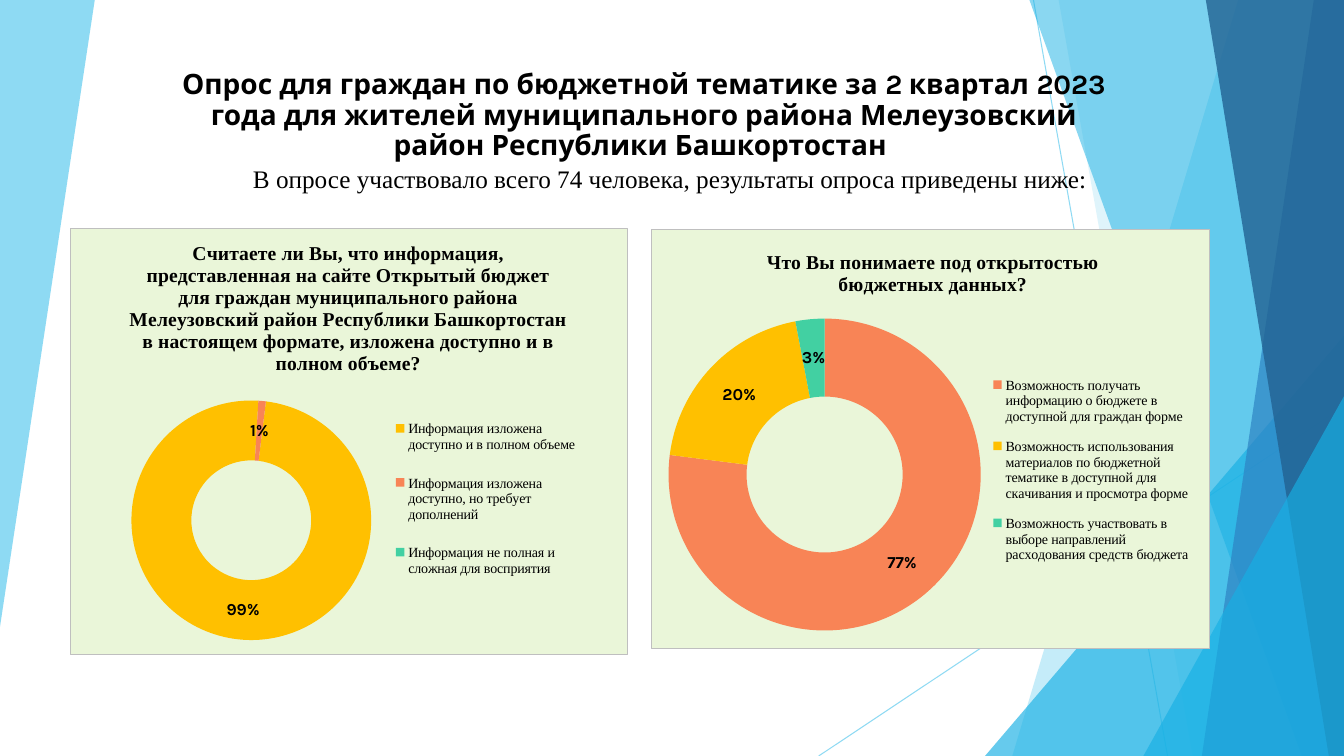
from lxml import etree
from pptx import Presentation
from pptx.chart.data import CategoryChartData
from pptx.dml.color import RGBColor
from pptx.enum.chart import XL_CHART_TYPE, XL_LEGEND_POSITION
from pptx.enum.shapes import MSO_CONNECTOR, MSO_SHAPE
from pptx.enum.text import MSO_ANCHOR, PP_ALIGN
from pptx.oxml.ns import qn
from pptx.util import Inches, Pt

DOUGHNUT = XL_CHART_TYPE.DOUGHNUT
LEGEND_RIGHT = XL_LEGEND_POSITION.RIGHT
STRAIGHT = MSO_CONNECTOR.STRAIGHT
TRIANGLE = MSO_SHAPE.ISOSCELES_TRIANGLE
TOP, BOTTOM = MSO_ANCHOR.TOP, MSO_ANCHOR.BOTTOM
CENTER = PP_ALIGN.CENTER

WIDTH, HEIGHT = 13.33, 7.5
SANS, SERIF = "Karla", "Times New Roman"
COLORS = {
    "black": "000000", "sky": "5FCBEF", "azure": "17B0E4", "blue": "2E83C3",
    "navy": "226292", "panel": "EAF6D9", "border": "BFBFBF",
    "orange": "F88456", "yellow": "FFC000", "green": "42D0A2",
}


def rgb(name):
    return RGBColor.from_string(COLORS[name])


def style_font(font, size, face, bold=False):
    font.size = Pt(size)
    font.name = face
    font.bold = bold
    font.color.rgb = rgb("black")


def paint(fill, color, opacity):
    fill.solid()
    fill.fore_color.rgb = rgb(color)
    for node in fill._xPr.iter(qn("a:srgbClr")):
        etree.SubElement(node, qn("a:alpha"), val=str(opacity * 1000))


def finish_facet(shape, color, opacity):
    shape.shadow.inherit = False
    shape.line.fill.background()
    paint(shape.fill, color, opacity)


def add_polygon(page, points, color, opacity):
    corners = [(Inches(x), Inches(y)) for x, y in points]
    builder = page.shapes.build_freeform(*corners[0])
    builder.add_line_segments(corners[1:], close=True)
    finish_facet(builder.convert_to_shape(), color, opacity)


def add_band(page, top_left, bottom_left, color, opacity):
    points = [(top_left, 0), (WIDTH, 0), (WIDTH, HEIGHT), (bottom_left, HEIGHT)]
    add_polygon(page, points, color, opacity)


def add_corner(page, left, top, color, opacity):
    shape = page.shapes.add_shape(TRIANGLE, Inches(left), Inches(top),
                                  Inches(WIDTH - left), Inches(HEIGHT - top))
    shape.adjustments[0] = 1
    finish_facet(shape, color, opacity)


def add_ray(page, start, end):
    ray = page.shapes.add_connector(STRAIGHT, *map(Inches, start + end))
    ray.line.width = Pt(0.75)
    paint(ray.line.fill, "sky", 70)
    etree.SubElement(ray._element.spPr, qn("a:effectLst"))


def add_backdrop(page):
    add_polygon(page, [(0, 0), (0.94, 0), (0, 6.22)], "sky", 70)
    add_ray(page, (10.25, 0), (11.58, HEIGHT))
    add_ray(page, (WIDTH, 4.03), (8.12, HEIGHT))
    add_band(page, 12.28, 10.04, "sky", 36)
    add_band(page, 10.5, 11.83, "sky", 20)
    add_corner(page, 9.77, 3.33, "azure", 66)
    add_band(page, 10.21, 12.91, "azure", 50)
    add_band(page, 13.03, 11.92, "blue", 70)
    add_band(page, 11.96, 13.18, "navy", 80)
    add_corner(page, 11.34, 3.93, "azure", 66)


def add_text(page, text, box, size, face, bold=False, anchor=TOP, spacing=1.0):
    frame = page.shapes.add_textbox(*map(Inches, box)).text_frame
    frame.word_wrap = True
    frame.vertical_anchor = anchor
    para = frame.paragraphs[0]
    para.alignment = CENTER
    para.line_spacing = spacing
    span = para.add_run()
    span.text = text
    style_font(span.font, size, face, bold)


def place(parent, after, **fractions):
    for old in parent.findall(qn("c:layout")):
        parent.remove(old)
    layout = etree.Element(qn("c:layout"))
    manual = etree.SubElement(layout, qn("c:manualLayout"))
    if after is None:
        etree.SubElement(manual, qn("c:layoutTarget"), val="inner")
        parent.insert(0, layout)
    else:
        parent.find(qn(after)).addnext(layout)
    for axis in "xy":
        etree.SubElement(manual, qn(f"c:{axis}Mode"), val="edge")
    for key, value in fractions.items():
        etree.SubElement(manual, qn(f"c:{key}"), val=str(value))


def fill_panel(chart):
    panel = etree.Element(qn("c:spPr"))
    chart._chartSpace.find(qn("c:chart")).addnext(panel)
    line = etree.Element(qn("a:ln"), w=str(Pt(0.75)))
    for parent, color in ((panel, "panel"), (line, "border")):
        solid = etree.SubElement(parent, qn("a:solidFill"))
        etree.SubElement(solid, qn("a:srgbClr"), val=COLORS[color])
    panel.append(line)


def hide_label(labels, index):
    label = etree.Element(qn("c:dLbl"))
    etree.SubElement(label, qn("c:idx"), val=str(index))
    etree.SubElement(label, qn("c:delete"), val="1")
    labels._element.insert(0, label)


def add_survey_chart(page, box, title, answers, angle, title_at, plot_at, legend_at):
    data = CategoryChartData()
    data.categories = [answer for answer, share, color in answers]
    data.add_series("Series 1", [share for answer, share, color in answers])
    chart = page.shapes.add_chart(DOUGHNUT, *map(Inches, box), data).chart
    style_font(chart.font, 10, SANS)
    fill_panel(chart)

    frame = chart.chart_title.text_frame
    frame.text = title
    style_font(frame.paragraphs[0].runs[0].font, 14, SERIF, True)
    chart.chart_title.include_in_layout = False
    place(chart.chart_title._element, "c:tx", **title_at)

    chart.has_legend = True
    chart.legend.position = LEGEND_RIGHT
    chart.legend.include_in_layout = False
    style_font(chart.legend.font, 10, SERIF)
    place(chart.legend._element, "c:legendPos", **legend_at)
    place(chart._chartSpace.find(".//" + qn("c:plotArea")), None, **plot_at)

    plot = chart.plots[0]
    plot.vary_by_categories = True
    plot._element.find(qn("c:firstSliceAng")).set("val", str(angle))
    series = plot.series[0]
    labels = series.data_labels
    labels.show_value = False
    labels.show_percentage = True
    labels.number_format = "0%"
    labels.number_format_is_linked = False
    style_font(labels.font, 12, SANS, True)
    for index, (answer, share, color) in enumerate(answers):
        slice_format = series.points[index].format
        slice_format.fill.solid()
        slice_format.fill.fore_color.rgb = rgb(color)
        slice_format.line.fill.background()
        if not share:
            hide_label(labels, index)


def build_survey_page(deck):
    page = deck.slides.add_slide(deck.slide_layouts[6])
    add_backdrop(page)
    add_text(page, "Опрос для граждан по бюджетной тематике за 2 квартал 2023 года для жителей муниципального района Мелеузовский район Республики Башкортостан ",
             (1.57, 0.59, 9.63, 1.06), 20, SANS, bold=True, anchor=BOTTOM, spacing=0.9)
    add_text(page, "В опросе участвовало всего 74 человека, результаты опроса приведены ниже:",
             (1.92, 1.57, 9.45, 0.4), 18, SERIF)
    add_survey_chart(
        page, (6.46, 2.27, 5.54, 4.17),
        "Что Вы понимаете под открытостью бюджетных данных?",
        [("Возможность получать информацию о бюджете в доступной для граждан форме", 77, "orange"),
         ("Возможность использования материалов по бюджетной тематике в доступной для скачивания и просмотра форме ", 20, "yellow"),
         ("Возможность участвовать в выборе направлений расходования средств бюджета", 3, "green")],
        0, dict(x=0.2, y=0.04), dict(x=0.03, y=0.21, w=0.56, h=0.75),
        dict(x=0.6, y=0.32, w=0.38, h=0.51))
    add_survey_chart(
        page, (0.69, 2.26, 5.54, 4.24),
        "Считаете ли Вы, что информация, представленная на сайте Открытый бюджет для граждан муниципального района Мелеузовский район Республики Башкортостан в настоящем формате, изложена доступно и в полном объеме?",
        [("Информация изложена доступно и в полном объеме", 99, "yellow"),
         ("Информация изложена доступно, но требует дополнений", 1, "orange"),
         ("Информация не полная и сложная для восприятия", 0, "green")],
        7, dict(x=0.1, y=0.02), dict(x=0.11, y=0.4, w=0.43, h=0.57),
        dict(x=0.57, y=0.4, w=0.35, h=0.47))


def main():
    deck = Presentation()
    deck.slide_width, deck.slide_height = Inches(WIDTH), Inches(HEIGHT)
    build_survey_page(deck)
    deck.save("out.pptx")


if __name__ == "__main__":
    main()
